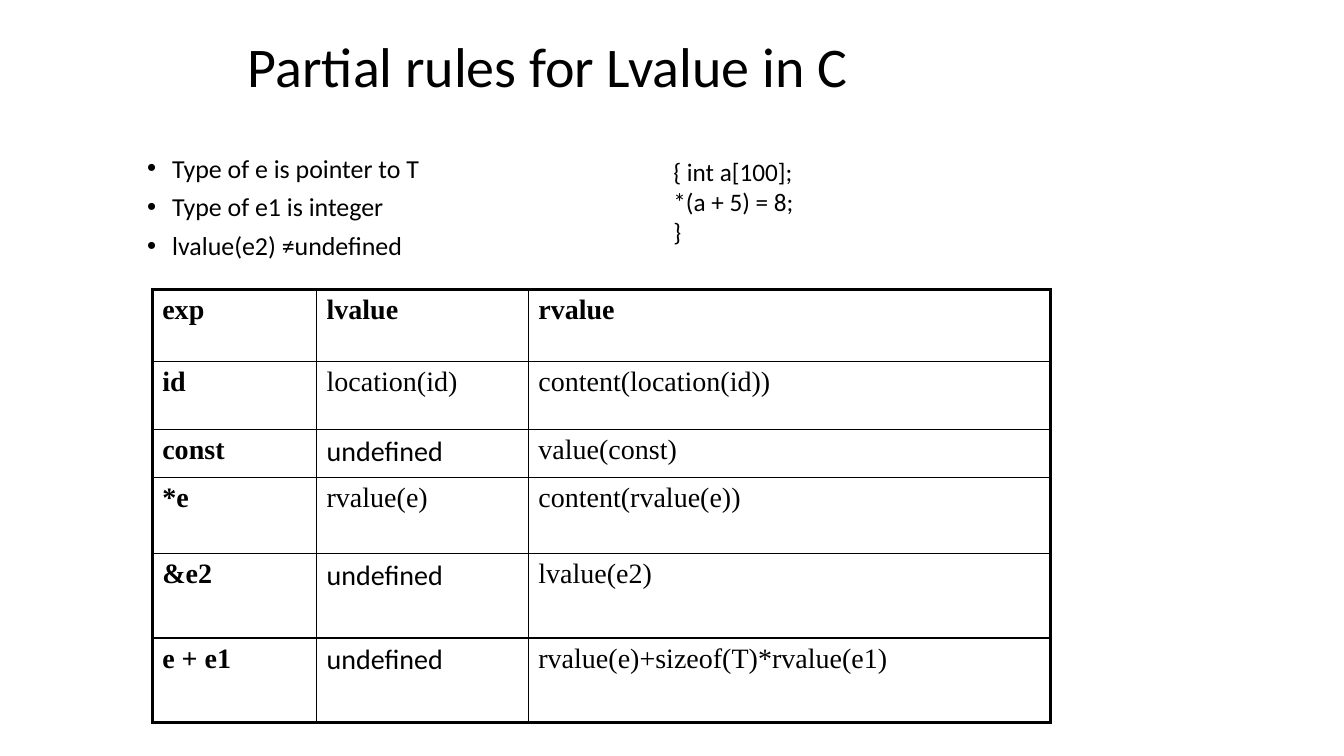
from lxml.etree import SubElement
from pptx import Presentation
from pptx.dml.color import RGBColor
from pptx.enum.text import MSO_ANCHOR
from pptx.oxml.ns import qn
from pptx.util import Inches, Pt

BLACK = "000000"


def color(hex_code):
    return RGBColor.from_string(hex_code)


def write(paragraph, text, size, font="Calibri", bold=False):
    run = paragraph.add_run()
    run.text = text
    for name, value in {"size": Pt(size), "name": font, "bold": bold}.items():
        setattr(run.font, name, value)
    run.font.color.rgb = color(BLACK)


prs = Presentation()
prs.slide_width, prs.slide_height = Inches(13.33), Inches(7.5)
slide = prs.slides.add_slide(prs.slide_layouts[6])

text_blocks = [
    ((2.36, 0.06, 8.5, 1.25), 40, ["Partial rules for Lvalue in C"],
     {"line_spacing": 0.9}, MSO_ANCHOR.MIDDLE, False),
    ((1.36, 1.52, 8.78, 1.15), 18.5,
     ["Type of e is pointer to T", "Type of e1 is integer", "lvalue(e2) ≠undefined"],
     {"line_spacing": 0.8, "space_before": Pt(10)}, MSO_ANCHOR.TOP, True),
    ((6.58, 1.5, 2.68, 1.01), 18, ["{ int a[100];", "*(a + 5) = 8;", "}"],
     {}, MSO_ANCHOR.TOP, False),
]
for place, size, lines, spacing, anchor, bulleted in text_blocks:
    frame = slide.shapes.add_textbox(*map(Inches, place)).text_frame
    frame.word_wrap = True
    frame.vertical_anchor = anchor
    for index, line in enumerate(lines):
        paragraph = frame.add_paragraph() if index else frame.paragraphs[0]
        for name, value in spacing.items():
            setattr(paragraph, name, value)
        if bulleted:
            properties = paragraph._p.get_or_add_pPr()
            properties.set("marL", str(Inches(0.25)))
            properties.set("indent", str(-Inches(0.25)))
            SubElement(properties, qn("a:buFont"), typeface="Arial")
            SubElement(properties, qn("a:buChar"), char="•")
        write(paragraph, line, size)

rules = [
    ("exp", "lvalue", "rvalue"),
    ("id", "location(id)", "content(location(id))"),
    ("const", "undefined", "value(const)"),
    ("*e", "rvalue(e)", "content(rvalue(e))"),
    ("&e2", "undefined", "lvalue(e2)"),
    ("e + e1", "undefined", "rvalue(e)+sizeof(T)*rvalue(e1)"),
]
column_widths = [1.63, 2.1, 5.18]
row_heights = [0.72, 0.67, 0.48, 0.75, 0.84, 0.84]
last_row, last_column = len(rules) - 1, len(column_widths) - 1

rules_table = slide.shapes.add_table(
    len(rules), len(column_widths), Inches(1.51), Inches(2.87),
    Inches(sum(column_widths)), Inches(sum(row_heights))).table
rules_table.first_row = rules_table.horz_banding = False
for column, width in zip(rules_table.columns, column_widths):
    column.width = Inches(width)
for row, height in zip(rules_table.rows, row_heights):
    row.height = Inches(height)

for r, rule in enumerate(rules):
    for c, text in enumerate(rule):
        cell = rules_table.cell(r, c)
        paragraph = cell.text_frame.paragraphs[0]
        space_before = SubElement(paragraph._p.get_or_add_pPr(), qn("a:spcBef"))
        SubElement(space_before, qn("a:spcPct"), val="20000")
        font = "Calibri" if text == "undefined" else "Times New Roman"
        write(paragraph, text, 20, font, bold=r == 0 or c == 0)

        outer_edges = {"L": c == 0, "R": c == last_column, "T": r == 0, "B": r == last_row}
        for side, outer in outer_edges.items():
            border = SubElement(cell._tc.get_or_add_tcPr(), qn(f"a:ln{side}"),
                                w=str(Pt(2.25 if outer else 1)))
            border_fill = SubElement(border, qn("a:solidFill"))
            SubElement(border_fill, qn("a:srgbClr"), val=BLACK)
        cell.fill.background()

prs.save("out.pptx")
